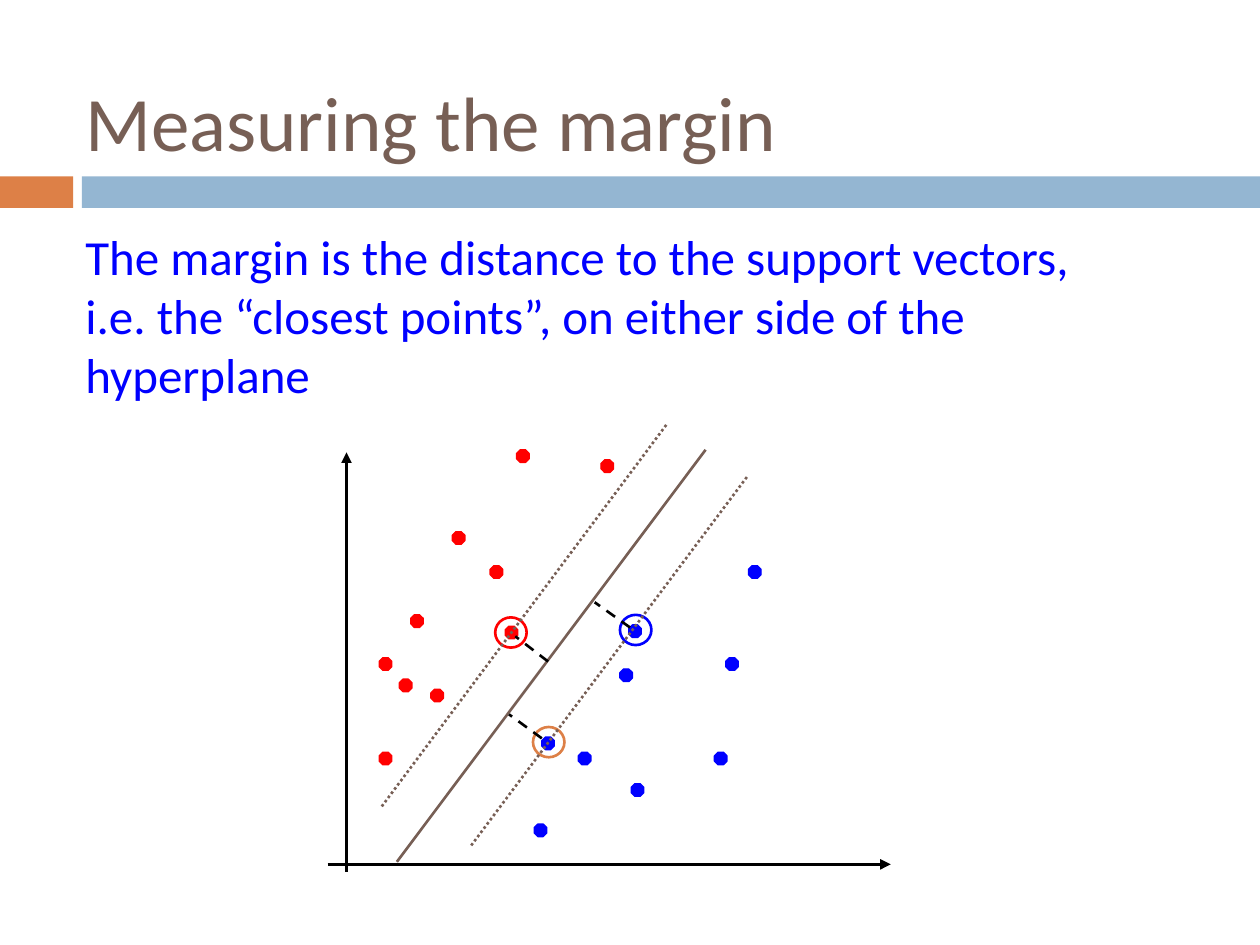
from lxml.etree import SubElement
from pptx import Presentation
from pptx.dml.color import RGBColor
from pptx.enum.dml import MSO_LINE
from pptx.enum.shapes import MSO_CONNECTOR, MSO_SHAPE
from pptx.enum.text import MSO_ANCHOR
from pptx.oxml.ns import qn
from pptx.util import Inches, Pt

COLORS = {
    "accent": "DD8047",
    "band": "94B6D2",
    "brown": "775F55",
    "axis": "000000",
    "red": "FF0000",
    "blue": "0000FF",
}
POINT_SIZE = 0.1
RING_WIDTH, RING_HEIGHT = 0.25, 0.24

# Left and top of each data point
RED_POINTS = [
    (3.89, 4.49), (3.26, 4.88), (3.42, 5.47), (3.01, 5.97), (3.59, 4.22),
    (3.01, 5.22), (3.17, 5.39), (4.01, 4.97), (4.1, 3.57), (4.77, 3.65),
]
BLUE_POINTS = [
    (4.99, 4.96), (4.59, 5.97), (5.67, 5.97), (4.24, 6.54), (4.92, 5.31),
    (4.3, 5.85), (5.01, 6.22), (5.76, 5.22), (5.94, 4.49),
]
SUPPORT_RINGS = [(3.93, 4.9, "red"), (4.23, 5.77, "accent"), (4.92, 4.88, "blue")]

# Start and end of each line
AXES = [((2.75, 6.92), (2.75, 3.59)), ((2.6, 6.86), (7.07, 6.86))]
HYPERPLANE = ((3.15, 6.84), (5.6, 3.57))
MARGIN_BOUNDARIES = [((3.74, 6.71), (5.94, 3.77)), ((3.03, 6.4), (5.29, 3.37))]
MARGIN_DISTANCES = [
    ((5, 4.98), (4.72, 4.78)),
    ((4.3, 5.86), (4.04, 5.67)),
    ((4.35, 5.25), (4.09, 5.05)),
]


def rgb(color):
    return RGBColor.from_string(COLORS[color])


def add_figure(slide, preset, box, fill=None, outline=None, weight=0.75):
    """Add a preset shape; a missing fill or outline is left empty."""
    figure = slide.shapes.add_shape(preset, *map(Inches, box))
    figure.shadow.inherit = False
    if fill:
        figure.fill.solid()
        figure.fill.fore_color.rgb = rgb(fill)
    else:
        figure.fill.background()
    if outline:
        figure.line.color.rgb = rgb(outline)
        figure.line.width = Pt(weight)
    else:
        figure.line.fill.background()
    return figure


def add_text(slide, box, wording, size, color, anchor=MSO_ANCHOR.TOP):
    frame = slide.shapes.add_textbox(*map(Inches, box)).text_frame
    frame.word_wrap = True
    frame.vertical_anchor = anchor
    paragraph = frame.paragraphs[0]
    paragraph.text = wording
    paragraph.font.name = "Calibri"
    paragraph.font.size = Pt(size)
    paragraph.font.color.rgb = rgb(color)


def add_line(slide, ends, color, weight=1.5, dash=None, arrow=False):
    start, end = ends
    connector = slide.shapes.add_connector(
        MSO_CONNECTOR.STRAIGHT, *map(Inches, (*start, *end))
    )
    connector.line.color.rgb = rgb(color)
    connector.line.width = Pt(weight)
    if dash:
        connector.line.dash_style = dash
    properties = connector.element.spPr
    if arrow:
        SubElement(properties.find(qn("a:ln")), qn("a:tailEnd"), type="triangle")
    SubElement(properties, qn("a:effectLst"))


def add_points(slide, positions, color):
    for left, top in positions:
        point = add_figure(
            slide, MSO_SHAPE.OCTAGON, (left, top, POINT_SIZE, POINT_SIZE), color, color
        )
        point.adjustments[0] = 0.29


def add_header(slide):
    add_figure(slide, MSO_SHAPE.RECTANGLE, (0, 1.4, 0.58, 0.25), "accent")
    add_figure(slide, MSO_SHAPE.RECTANGLE, (0.65, 1.4, 9.35, 0.25), "band")
    add_text(slide, (0.58, 0.42, 8.83, 1.08), "Measuring the margin", 44, "brown",
             MSO_ANCHOR.MIDDLE)


def add_margin_plot(slide):
    for axis in AXES:
        add_line(slide, axis, "axis", weight=2, arrow=True)
    add_points(slide, RED_POINTS, "red")
    add_points(slide, BLUE_POINTS, "blue")
    add_line(slide, HYPERPLANE, "brown")
    for left, top, color in SUPPORT_RINGS:
        add_figure(slide, MSO_SHAPE.OVAL, (left, top, RING_WIDTH, RING_HEIGHT),
                   outline=color, weight=1.5)
    for distance in MARGIN_DISTANCES:
        add_line(slide, distance, "axis", dash=MSO_LINE.DASH)
    for boundary in MARGIN_BOUNDARIES:
        add_line(slide, boundary, "brown", dash=MSO_LINE.ROUND_DOT)


def main():
    presentation = Presentation()
    presentation.slide_width = Inches(10)
    presentation.slide_height = Inches(7.5)
    slide = presentation.slides.add_slide(presentation.slide_layouts[6])
    add_header(slide)
    add_text(
        slide,
        (0.58, 1.75, 8.46, 1.04),
        "The margin is the distance to the support vectors, i.e. the “closest "
        "points”, on either side of the hyperplane",
        28,
        "blue",
    )
    add_margin_plot(slide)
    presentation.save("out.pptx")


if __name__ == "__main__":
    main()
